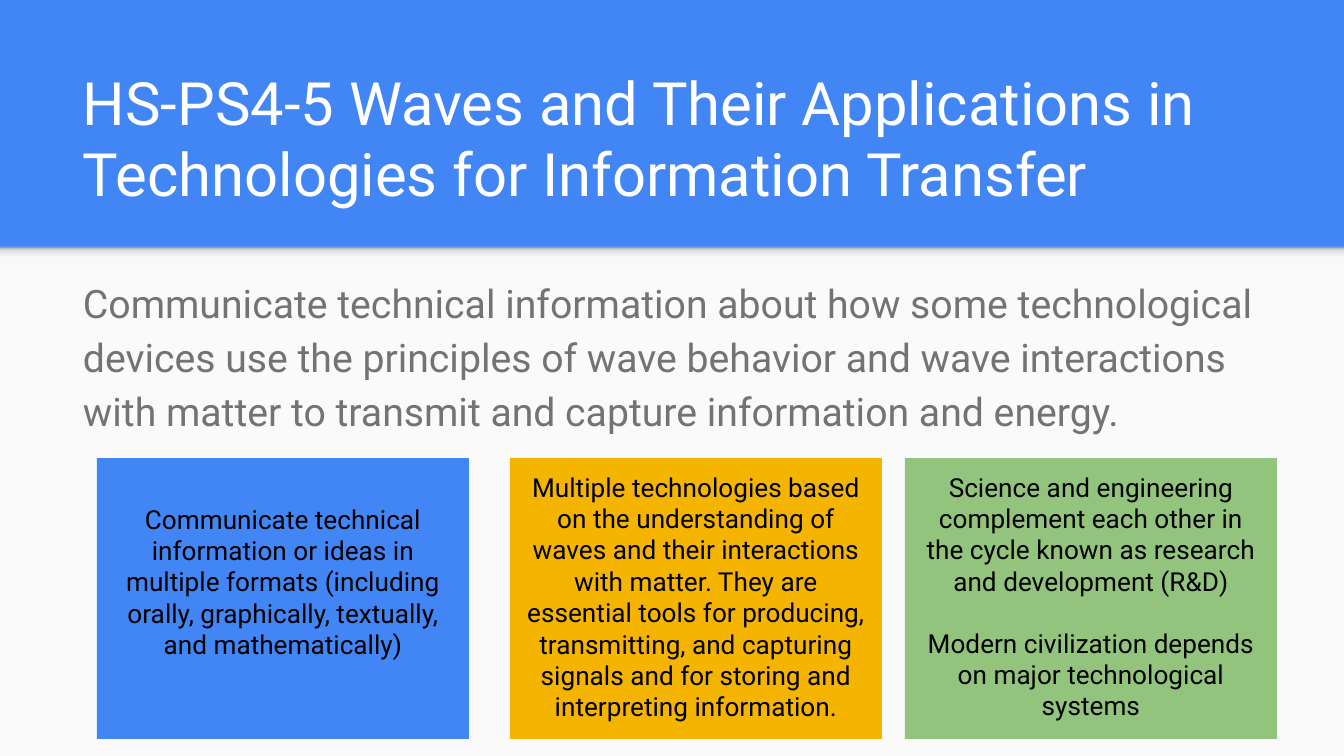
from dataclasses import dataclass

from lxml import etree
from pptx import Presentation
from pptx import util as u
from pptx.dml.color import RGBColor
from pptx.enum import shapes, text
from pptx.oxml import ns
from pptx.shapes.autoshape import Shape
from pptx.slide import Slide

SLIDE_WIDTH, SLIDE_HEIGHT = 1344, 756
EMU_PER_PX = u.Inches(10) / SLIDE_WIDTH
INSET = 13


@dataclass(frozen=True)
class Theme:
    font: str = "Roboto"
    blue: str = "4285F4"
    yellow: str = "F4B400"
    green: str = "93C47D"
    panel: str = "FAFAFA"
    white: str = "FFFFFF"
    grey: str = "737373"
    black: str = "000000"
    shadow: tuple = ((0, "F9F9F9"), (36, "F9F9F9"), (80, "DEDEDE"), (100, "999999"))
    title_size: int = 32
    body_size: int = 21
    card_size: int = 14
    body_gap: int = 16
    card_gap: float = 16.4


THEME = Theme()


@dataclass(frozen=True)
class Box:
    left: int
    top: int
    width: int
    height: int

    def emu(self) -> list[int]:
        return [px(n) for n in (self.left, self.top, self.width, self.height)]


@dataclass(frozen=True)
class Card:
    left: int
    fill: str
    paragraphs: tuple[str, ...]
    top_inset: int = INSET


CARD_TOP, CARD_WIDTH, CARD_HEIGHT = 458, 372, 281
CARDS = (
    Card(97, THEME.blue, (
        "Communicate technical information or ideas in multiple formats "
        "(including orally, graphically, textually, and mathematically)",
    ), top_inset=45),
    Card(510, THEME.yellow, (
        "Multiple technologies based on the understanding of waves and their "
        "interactions with matter. They are essential tools for producing, "
        "transmitting, and capturing signals and for storing and interpreting "
        "information.",
    )),
    Card(905, THEME.green, (
        "Science and engineering complement each other in the cycle known as "
        "research and development (R&D)",
        "Modern civilization depends on major technological systems",
    )),
)


def px(length: int) -> int:
    return round(length * EMU_PER_PX)


def add_rectangle(slide: Slide, box: Box, fill: str) -> Shape:
    shape = slide.shapes.add_shape(shapes.MSO_SHAPE.RECTANGLE, *box.emu())
    shape.shadow.inherit = False
    shape.line.fill.background()
    shape.fill.solid()
    shape.fill.fore_color.rgb = RGBColor.from_string(fill)
    return shape


def add_shadow(slide: Slide, box: Box) -> None:
    shape = add_rectangle(slide, box, THEME.panel)
    shape.fill.gradient()
    shape.fill.gradient_angle = 90
    stops = shape._element.spPr.find(".//" + ns.qn("a:gsLst"))
    for stop in list(stops):
        stops.remove(stop)
    for position, color in THEME.shadow:
        stop = etree.SubElement(stops, ns.qn("a:gs"), pos=str(position * 1000))
        etree.SubElement(stop, ns.qn("a:srgbClr"), val=color)


def write(shape: Shape, paragraphs: tuple[str, ...], size: int, color: str,
          align=text.PP_ALIGN.LEFT, anchor=text.MSO_ANCHOR.TOP,
          gap: float = 0, top_inset: int = INSET) -> None:
    frame = shape.text_frame
    frame.word_wrap = True
    frame.auto_size = text.MSO_AUTO_SIZE.NONE
    frame.vertical_anchor = anchor
    frame.margin_left = frame.margin_right = frame.margin_bottom = px(INSET)
    frame.margin_top = px(top_inset)
    for index, content in enumerate(paragraphs):
        paragraph = frame.add_paragraph() if index else frame.paragraphs[0]
        paragraph.text = content
        paragraph.alignment = align
        if index:
            paragraph.space_before = u.Pt(gap)
        paragraph.font.name = THEME.font
        paragraph.font.size = u.Pt(size)
        paragraph.font.color.rgb = RGBColor.from_string(color)


def add_card(slide: Slide, card: Card) -> None:
    box = Box(card.left, CARD_TOP, CARD_WIDTH, CARD_HEIGHT)
    shape = add_rectangle(slide, box, card.fill)
    write(shape, card.paragraphs, THEME.card_size, THEME.black,
          align=text.PP_ALIGN.CENTER, gap=THEME.card_gap, top_inset=card.top_inset)


def main() -> None:
    presentation = Presentation()
    presentation.slide_width = px(SLIDE_WIDTH)
    presentation.slide_height = px(SLIDE_HEIGHT)
    slide = presentation.slides.add_slide(presentation.slide_layouts[6])
    slide.background.fill.solid()
    slide.background.fill.fore_color.rgb = RGBColor.from_string(THEME.blue)

    panel_top = 247
    add_rectangle(slide, Box(0, panel_top, SLIDE_WIDTH, SLIDE_HEIGHT - panel_top),
                  THEME.panel)
    add_shadow(slide, Box(0, panel_top, SLIDE_WIDTH, 16))

    title = slide.shapes.add_textbox(*Box(70, 109, 1208, 113).emu())
    write(title, (
        "HS-PS4-5 Waves and Their Applications in Technologies for "
        "Information Transfer",
    ), THEME.title_size, THEME.white, anchor=text.MSO_ANCHOR.BOTTOM)

    body = slide.shapes.add_textbox(*Box(70, 259, 1208, 146).emu())
    write(body, (
        "Communicate technical information about how some technological devices "
        "use the principles of wave behavior and wave interactions with matter to "
        "transmit and capture information and energy.",
    ), THEME.body_size, THEME.grey)
    body.text_frame.paragraphs[0].line_spacing = 1.15
    body.text_frame.paragraphs[0].space_after = u.Pt(THEME.body_gap)

    for card in CARDS:
        add_card(slide, card)

    presentation.save("out.pptx")


if __name__ == "__main__":
    main()
